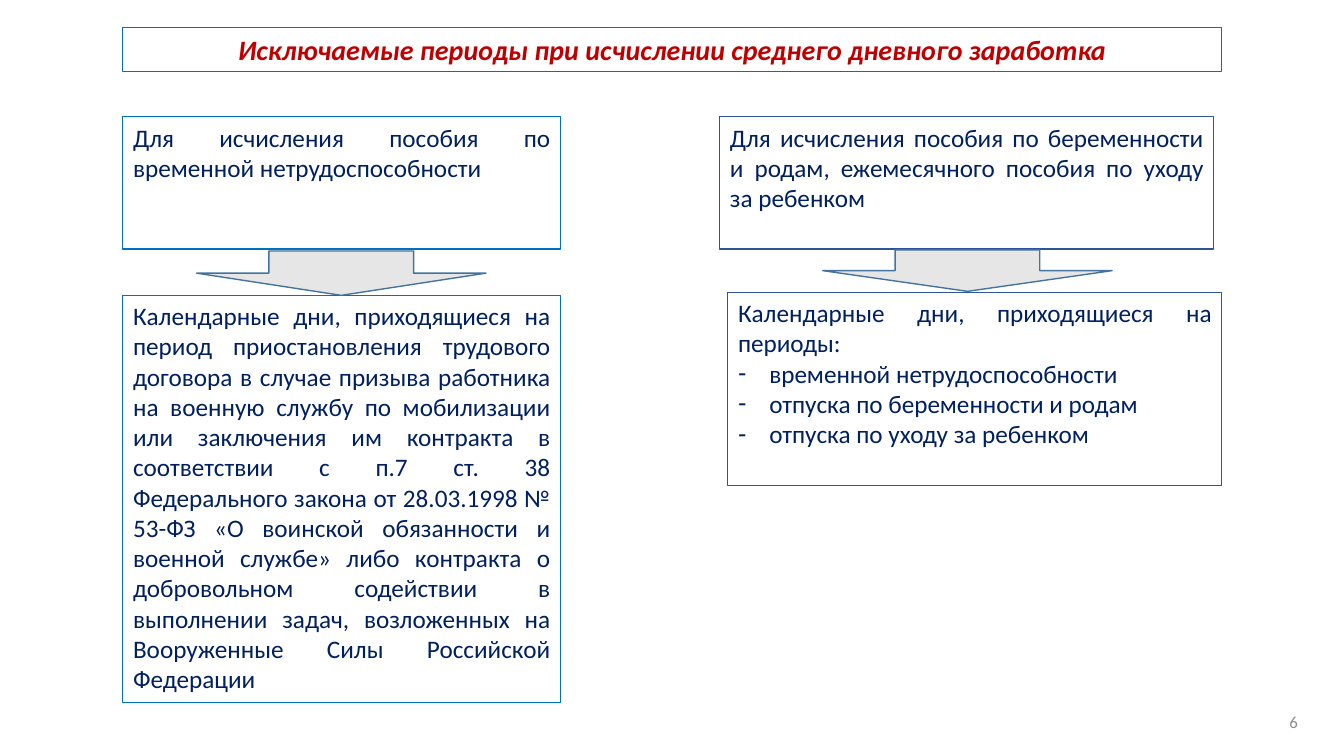
from lxml.etree import SubElement
from pptx import Presentation
from pptx.dml.color import RGBColor
from pptx.enum.shapes import MSO_SHAPE as Preset
from pptx.enum.text import MSO_ANCHOR as Anchor, MSO_AUTO_SIZE as AutoSize, PP_ALIGN as Align
from pptx.oxml.ns import qn
from pptx.util import Inches, Pt

COLORS = {
    "title": "C00000", "text": "002060", "number": "8C8C8C",
    "left": "0070C0", "right": "2F5597", "arrow": "E7E6E6", "arrow_line": "43739E",
}

presentation = Presentation()
presentation.slide_width, presentation.slide_height = Inches(13.33), Inches(7.5)
column = presentation.slide_width / 100
row = presentation.slide_height / 100
slide = presentation.slides.add_slide(presentation.slide_layouts.get_by_name("Comparison"))


def place(shape, left, top, width, height, line=None, weight=0.75):
    shape.left, shape.width = int(left * column), int(width * column)
    shape.top, shape.height = int(top * row), int(height * row)
    if line:
        shape.line.color.rgb = RGBColor.from_string(COLORS[line])
        shape.line.width = Pt(weight)


def write(shape, text, items=(), size=18, color="text", align=Align.JUSTIFY,
          anchor=Anchor.TOP, bold=False, italic=False):
    frame = shape.text_frame
    frame.word_wrap, frame.auto_size, frame.vertical_anchor = True, AutoSize.NONE, anchor
    frame.text = "\n".join([text, *items])
    for index, paragraph in enumerate(frame.paragraphs):
        paragraph.alignment = align
        paragraph.space_before = Pt(0)
        font = paragraph.runs[0].font
        font.name, font.size, font.bold, font.italic = "Calibri", Pt(size), bold, italic
        font.color.rgb = RGBColor.from_string(COLORS[color])
        properties = paragraph._p.get_or_add_pPr()
        indent = Inches(0.31) if index else 0
        properties.set("marL", str(indent))
        properties.set("indent", str(-indent))
        if index:
            SubElement(properties, qn("a:buChar"), char="-")
        else:
            SubElement(properties, qn("a:buNone"))


title = slide.shapes.title
place(title, 9.15, 3.6, 81.77, 5.87, "left")
write(title, "Исключаемые периоды при исчислении среднего дневного заработка",
      size=20, color="title", align=Align.CENTER, bold=True, italic=True)

boxes = [
    (1, "left", (9.15, 15.47, 32.56, 17.47),
     "Для исчисления пособия по временной нетрудоспособности", ()),
    (2, "left", (9.15, 39.07, 32.56, 53.87),
     "Календарные дни, приходящиеся на период приостановления трудового договора "
     "в случае призыва работника на военную службу по мобилизации или заключения им "
     "контракта в соответствии с п.7 ст. 38 Федерального закона от 28.03.1998 № 53-ФЗ "
     "«О воинской обязанности и военной службе» либо контракта о добровольном содействии "
     "в выполнении задач, возложенных на Вооруженные Силы Российской Федерации", ()),
    (3, "right", (53.56, 15.47, 36.76, 17.47),
     "Для исчисления пособия по беременности и родам, ежемесячного пособия "
     "по уходу за ребенком", ()),
    (4, "right", (54.16, 38.67, 36.76, 25.6),
     "Календарные дни, приходящиеся на периоды:",
     ("временной нетрудоспособности", "отпуска по беременности и родам",
      "отпуска по уходу за ребенком")),
]
for index, line, area, text, items in boxes:
    box = slide.placeholders[index]
    place(box, *area, line)
    write(box, text, items)

for left, top, height in [(14.63, 33.2, 5.87), (61.22, 33.07, 5.47)]:
    arrow = slide.shapes.add_shape(Preset.DOWN_ARROW, 0, 0, 0, 0)
    place(arrow, left, top, 21.53, height, "arrow_line", 1)
    arrow.shadow.inherit = False
    arrow.fill.solid()
    arrow.fill.fore_color.rgb = RGBColor.from_string(COLORS["arrow"])

number = slide.shapes.add_textbox(0, 0, 0, 0)
place(number, 74.79, 92.8, 22.51, 5.33)
write(number, "6", size=12, color="number", align=Align.RIGHT, anchor=Anchor.MIDDLE)

presentation.save("out.pptx")
